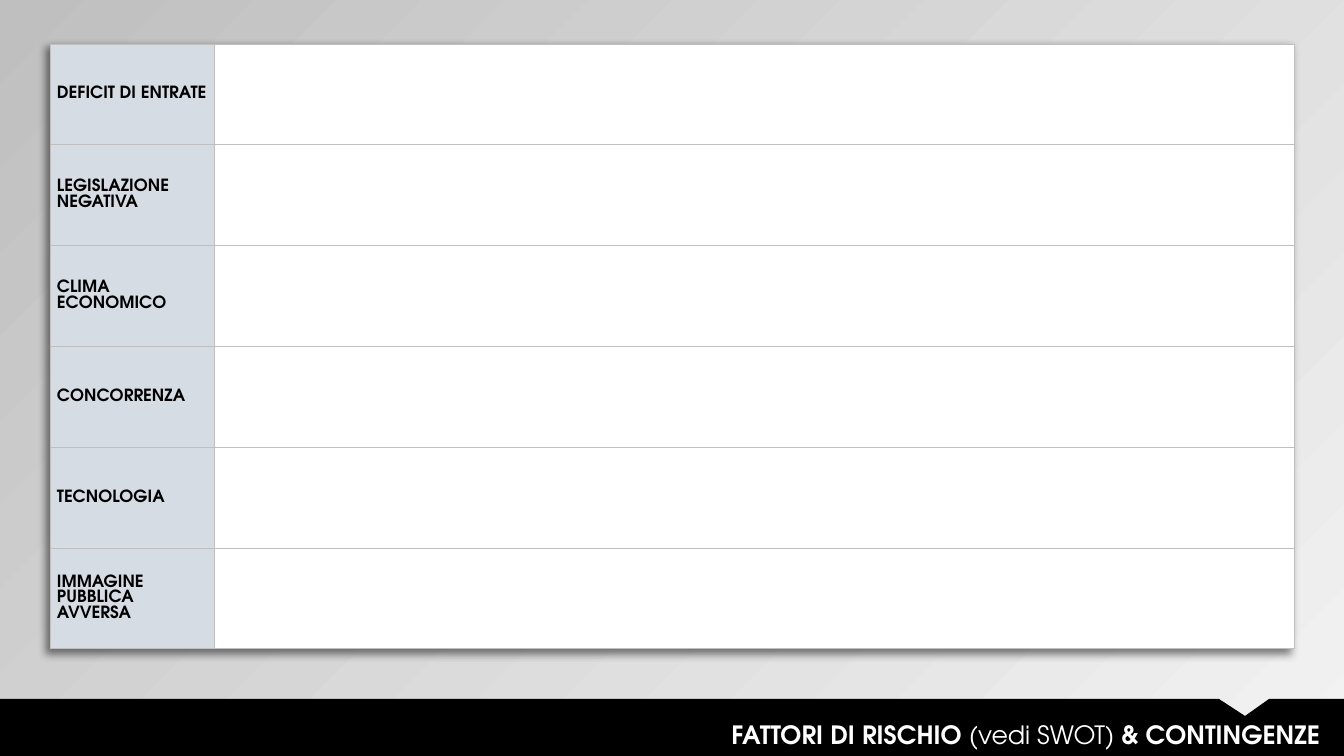
from dataclasses import dataclass

from lxml import etree
from pptx import Presentation
from pptx import util as u
from pptx.dml.color import RGBColor
from pptx.enum import text as t
from pptx.oxml import ns

EMU_PER_PX = 12192000 / 1344


@dataclass(frozen=True)
class Theme:
    font: str = "TeX Gyre Adventor"
    black: str = "000000"
    white: str = "FFFFFF"
    label_fill: str = "D6DCE4"
    border: str = "BFBFBF"
    background_light: str = "F2F2F2"
    background_dark: str = "BFBFBF"
    label_size: float = 12
    label_leading: float = 11
    title_size: float = 18
    border_width: float = 0.5


@dataclass(frozen=True)
class Box:
    left: int
    top: int
    width: int
    height: int

    def emu(self) -> tuple:
        return px(self.left), px(self.top), px(self.width), px(self.height)


@dataclass(frozen=True)
class TitlePart:
    text: str
    bold: bool


THEME = Theme()
SLIDE = Box(0, 0, 1344, 756)
RISK_TABLE = Box(50, 44, 1244, 605)
LABEL_WIDTH = 164
CELL_INSET = 7
TITLE = Box(417, 714, 913, 40)
BAND = [(0, 699), (1219, 699), (1245, 716), (1269, 699),
        (1344, 699), (1344, 756), (0, 756)]
RISKS = ["DEFICIT DI ENTRATE", "LEGISLAZIONE NEGATIVA", "CLIMA ECONOMICO",
         "CONCORRENZA", "TECNOLOGIA", "IMMAGINE PUBBLICA AVVERSA"]
TITLE_PARTS = [TitlePart("FATTORI DI RISCHIO ", True),
               TitlePart("(vedi SWOT) ", False),
               TitlePart("& CONTINGENZE", True)]


def px(length: float) -> u.Emu:
    return u.Emu(round(length * EMU_PER_PX))


def rgb(color: str) -> RGBColor:
    return RGBColor.from_string(color)


def add_element(parent, tag: str, **attributes):
    values = {name: str(value) for name, value in attributes.items()}
    return etree.SubElement(parent, ns.qn(tag), values)


def write_text(paragraph, text: str, *, size: float, color: str, bold: bool) -> None:
    run = paragraph.add_run()
    run.text = text
    run.font.name = THEME.font
    run.font.size = u.Pt(size)
    run.font.bold = bold
    run.font.color.rgb = rgb(color)


def paint_background(slide) -> None:
    fill = slide.background.fill
    fill.gradient()
    fill.gradient_angle = 135
    colors = (THEME.background_light, THEME.background_dark)
    for stop, color, position in zip(fill.gradient_stops, colors, (0, 1)):
        stop.color.rgb = rgb(color)
        stop.position = position


def style_cell(cell, fill: str) -> None:
    properties = cell._tc.get_or_add_tcPr()
    for side in ("a:lnL", "a:lnR", "a:lnT", "a:lnB"):
        line = add_element(properties, side, w=u.Pt(THEME.border_width))
        add_element(add_element(line, "a:solidFill"), "a:srgbClr", val=THEME.border)
    cell.fill.solid()
    cell.fill.fore_color.rgb = rgb(fill)
    cell.vertical_anchor = t.MSO_ANCHOR.MIDDLE
    cell.margin_left = cell.margin_right = px(CELL_INSET)
    cell.margin_top = cell.margin_bottom = 0


def add_table_shadow(table) -> None:
    properties = table._tbl.tblPr
    effects = add_element(properties, "a:effectLst")
    properties.insert(0, effects)
    shadow = add_element(effects, "a:outerShdw", blurRad=u.Pt(6), dist=u.Pt(4),
                         dir=8100000, algn="tr", rotWithShape=0)
    color = add_element(shadow, "a:srgbClr", val=THEME.black)
    add_element(color, "a:alpha", val=50000)


def add_risk_table(slide) -> None:
    table = slide.shapes.add_table(len(RISKS), 2, *RISK_TABLE.emu()).table
    table.first_row = table.horz_banding = False
    add_table_shadow(table)
    table.columns[0].width = px(LABEL_WIDTH)
    table.columns[1].width = px(RISK_TABLE.width - LABEL_WIDTH)
    for index, risk in enumerate(RISKS):
        table.rows[index].height = px(RISK_TABLE.height / len(RISKS))
        label = table.cell(index, 0)
        style_cell(label, THEME.label_fill)
        style_cell(table.cell(index, 1), THEME.white)
        paragraph = label.text_frame.paragraphs[0]
        paragraph.line_spacing = u.Pt(THEME.label_leading)
        write_text(paragraph, risk, size=THEME.label_size, color=THEME.black, bold=True)


def add_band(slide) -> None:
    builder = slide.shapes.build_freeform(*BAND[0], scale=EMU_PER_PX)
    builder.add_line_segments(BAND[1:], close=True)
    shape = builder.convert_to_shape()
    shape.shadow.inherit = False
    shape.fill.solid()
    shape.fill.fore_color.rgb = rgb(THEME.black)
    shape.line.fill.background()


def add_title(slide) -> None:
    frame = slide.shapes.add_textbox(*TITLE.emu()).text_frame
    frame.word_wrap = True
    frame.auto_size = t.MSO_AUTO_SIZE.SHAPE_TO_FIT_TEXT
    paragraph = frame.paragraphs[0]
    paragraph.alignment = t.PP_ALIGN.RIGHT
    for part in TITLE_PARTS:
        write_text(paragraph, part.text, size=THEME.title_size,
                   color=THEME.white, bold=part.bold)


def main() -> None:
    presentation = Presentation()
    presentation.slide_width = px(SLIDE.width)
    presentation.slide_height = px(SLIDE.height)
    slide = presentation.slides.add_slide(presentation.slide_layouts[6])
    paint_background(slide)
    add_risk_table(slide)
    add_band(slide)
    add_title(slide)
    presentation.save("out.pptx")


if __name__ == "__main__":
    main()
